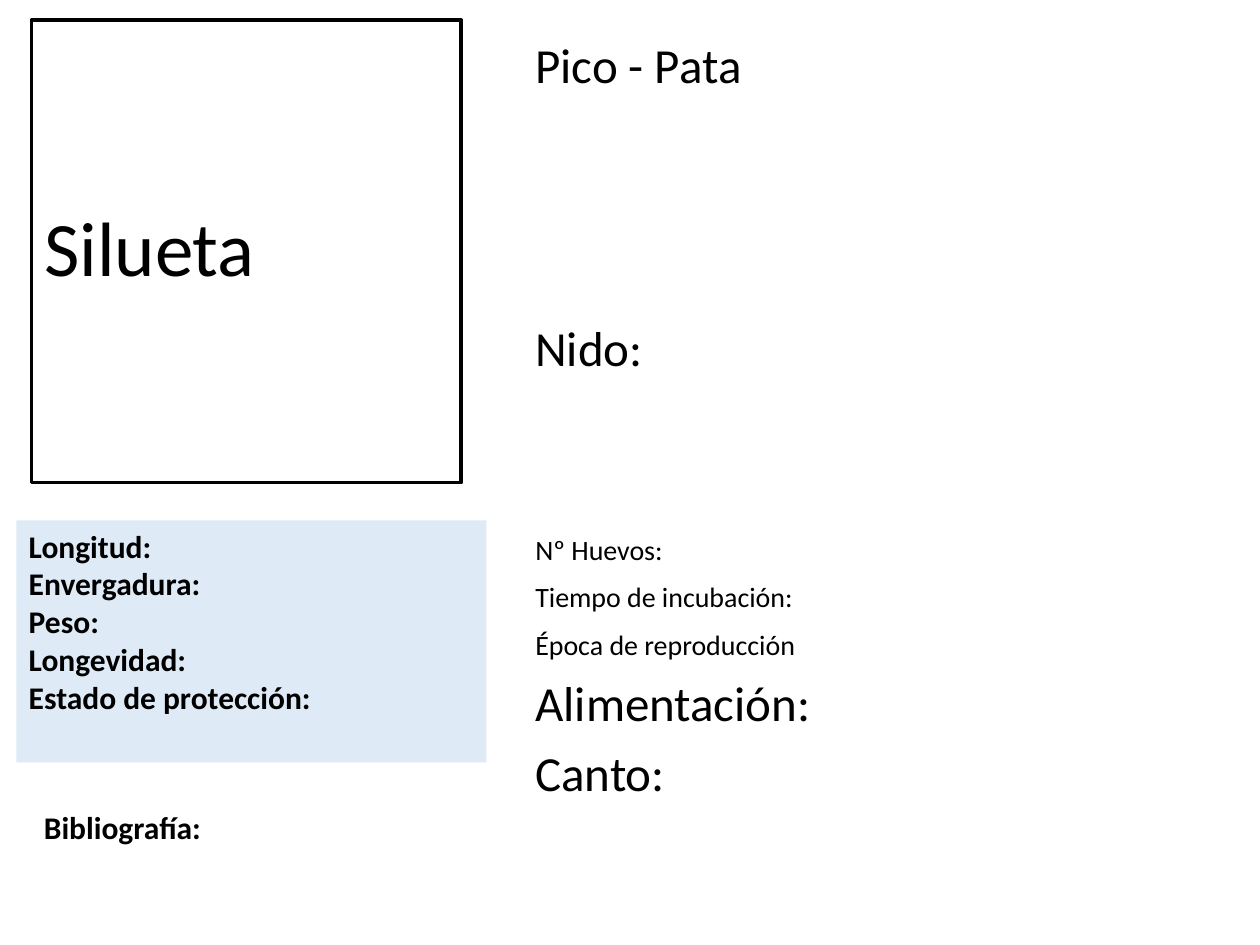
from pptx import Presentation
from pptx.dml.color import RGBColor
from pptx.enum import shapes, text
from pptx.util import Pt

BLACK, BLUE = "000000", "DEEBF7"
BIG, MID, SMALL = 28, 18, 16

# wording, size, space before
NOTES = [
    ("Pico - Pata", BIG, 0),
    ("Nido:", BIG, 131),
    ("Nº Huevos:", SMALL, 91),
    ("Tiempo de incubación:", SMALL, 10),
    ("Época de reproducción", SMALL, 10),
    ("Alimentación:", BIG, 10),
    ("Canto:", BIG, 10),
]
FACTS = [(word, MID, 0) for word in (
    "Longitud:", "Envergadura:", "Peso:", "Longevidad:",
    "Estado de protección:")]
BOXES = {  # left, top, width, height
    "title": (18, 11.5, 245.5, 264.25),
    "notes": (298.8, 20.2, 421.2, 509.8),
    "facts": (9.36, 297.4, 268.6, 138.2),
    "books": (18, 458, 694, 51),
}


def color(code):
    return RGBColor.from_string(code)


def place(name):
    return [Pt(v) for v in BOXES[name]]


def write(shape, rows, bold=False, space=1.0, anchor=text.MSO_ANCHOR.TOP):
    frame = shape.text_frame
    frame.word_wrap = True
    frame.auto_size = text.MSO_AUTO_SIZE.NONE
    frame.vertical_anchor = anchor
    for i, (words, size, before) in enumerate(rows):
        para = frame.add_paragraph() if i else frame.paragraphs[0]
        para.alignment = text.PP_ALIGN.LEFT
        para.line_spacing = space
        para.space_before = Pt(before)
        run = para.add_run()
        run.text = words
        look = {"name": "Calibri", "size": Pt(size), "bold": bold}
        for key, value in look.items():
            setattr(run.font, key, value)
        run.font.color.rgb = color(BLACK)


def main():
    deck = Presentation()
    deck.slide_width, deck.slide_height = Pt(720), Pt(540)
    slide = deck.slides.add_slide(deck.slide_layouts[5])

    title = slide.shapes.title
    title.left, title.top, title.width, title.height = place("title")
    title.line.color.rgb = color(BLACK)
    title.line.width = Pt(2.25)
    write(title, [("Silueta", 44, 0)], space=0.9,
          anchor=text.MSO_ANCHOR.MIDDLE)

    notes = slide.shapes.add_textbox(*place("notes"))
    write(notes, NOTES, space=0.9)

    facts = slide.shapes.add_shape(
        shapes.MSO_SHAPE.RECTANGLE, *place("facts"))
    facts.shadow.inherit = False
    facts.fill.solid()
    facts.fill.fore_color.rgb = color(BLUE)
    facts.line.fill.background()
    write(facts, FACTS, bold=True)

    books = slide.shapes.add_textbox(*place("books"))
    write(books, [("Bibliografía:", MID, 0)], bold=True)

    deck.save("out.pptx")


if __name__ == "__main__":
    main()
